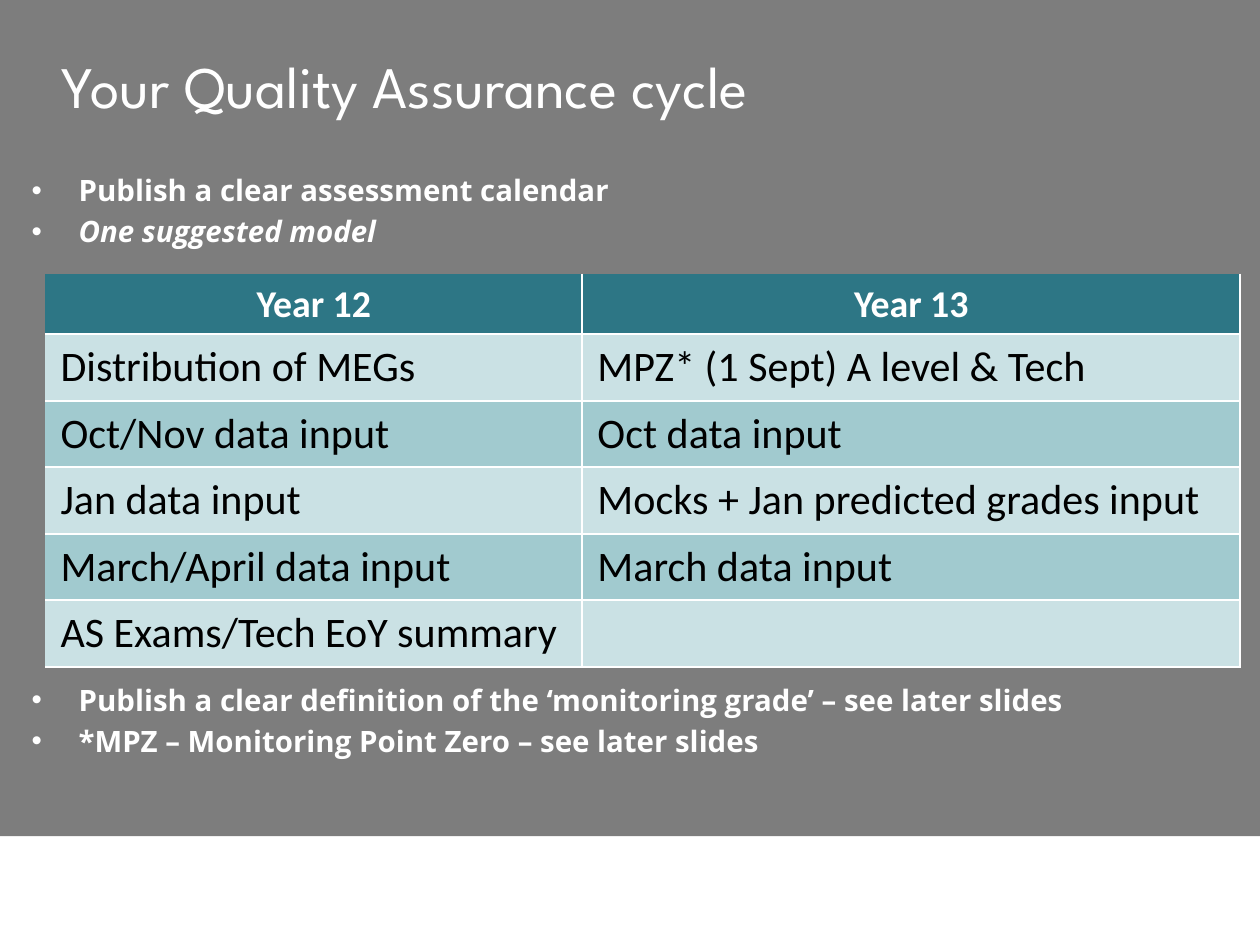
import dataclasses

import lxml.etree
import pptx
import pptx.dml.color
import pptx.enum.shapes
import pptx.enum.text
import pptx.oxml.ns
import pptx.util

Inches = pptx.util.Inches
Pt = pptx.util.Pt
qn = pptx.oxml.ns.qn
ALIGN = pptx.enum.text.PP_ALIGN
ANCHOR = pptx.enum.text.MSO_ANCHOR

HUES = {
    "panel": "7D7D7D",
    "white": "FFFFFF",
    "black": "000000",
    "head": "2D7685",
    "light": "CAE1E4",
    "dark": "A1CACF",
}


@dataclasses.dataclass(frozen=True)
class Style:
    font: str
    size: float
    hue: str
    bold: bool = False


@dataclasses.dataclass(frozen=True)
class Point:
    text: str
    slant: bool = False


@dataclasses.dataclass(frozen=True)
class Group:
    top: float
    points: tuple[Point, ...]


TITLE = Style("League Spartan", 28, "white")
BODY = Style("Open Sans", 14, "white", True)
HEAD = Style("Calibri", 18, "white", True)
CELL = Style("Calibri", 20, "black")

GROUPS = (
    Group(1.14, (
        Point("Publish a clear assessment calendar"),
        Point("One suggested model", True),
    )),
    Group(4.51, (
        Point("Publish a clear definition of the ‘monitoring grade’ – see later slides"),
        Point("*MPZ – Monitoring Point Zero – see later slides"),
    )),
)

YEARS = (
    ("Year 12", "Year 13"),
    ("Distribution of MEGs", "MPZ* (1 Sept) A level & Tech"),
    ("Oct/Nov data input", "Oct data input"),
    ("Jan data input", "Mocks + Jan predicted grades input"),
    ("March/April data input", "March data input"),
    ("AS Exams/Tech EoY summary", ""),
)
WIDTHS = (3.55, 4.35)
HEAD_H, ROW_H = 0.4, 0.44


def shade(name: str) -> pptx.dml.color.RGBColor:
    return pptx.dml.color.RGBColor.from_string(HUES[name])


def add_run(para, text: str, style: Style, slant: bool = False) -> None:
    run = para.add_run()
    run.text = text
    font = run.font
    font.name, font.size = style.font, Pt(style.size)
    font.bold, font.italic = style.bold, slant
    font.color.rgb = shade(style.hue)


def add_box(slide, left: float, top: float, width: float, height: float):
    frame = slide.shapes.add_textbox(
        Inches(left), Inches(top), Inches(width), Inches(height)).text_frame
    frame.word_wrap = True
    return frame


def add_group(slide, group: Group) -> None:
    frame = add_box(slide, 0.21, group.top, 7.9, 0.57)
    frame.margin_left = frame.margin_top = frame.margin_bottom = 0
    for i, point in enumerate(group.points):
        para = frame.add_paragraph() if i else frame.paragraphs[0]
        props = para._p.get_or_add_pPr()
        props.set("marL", str(Inches(0.31)))
        props.set("indent", str(-Inches(0.31)))
        face = lxml.etree.SubElement(props, qn("a:buFont"))
        face.set("typeface", "Arial")
        mark = lxml.etree.SubElement(props, qn("a:buChar"))
        mark.set("char", "•")
        if i:
            para.space_before = Pt(2.7)
        add_run(para, point.text, BODY, point.slant)


def add_edge(cell, side: str, drawn: bool) -> None:
    line = lxml.etree.SubElement(
        cell._tc.get_or_add_tcPr(), qn(f"a:ln{side}"), w=str(Pt(1)))
    if drawn:
        fill = lxml.etree.SubElement(line, qn("a:solidFill"))
        lxml.etree.SubElement(fill, qn("a:srgbClr"), val=HUES["white"])
    else:
        lxml.etree.SubElement(line, qn("a:noFill"))


def add_years(slide) -> None:
    high = HEAD_H + ROW_H * (len(YEARS) - 1)
    table = slide.shapes.add_table(
        len(YEARS), len(WIDTHS), Inches(0.3), Inches(1.81),
        Inches(sum(WIDTHS)), Inches(high)).table
    for col, width in zip(table.columns, WIDTHS):
        col.width = Inches(width)
    for r, texts in enumerate(YEARS):
        table.rows[r].height = Inches(ROW_H if r else HEAD_H)
        hue = ("dark", "light")[r % 2] if r else "head"
        for c, text in enumerate(texts):
            cell = table.cell(r, c)
            # The table's outer left and top edges stay bare
            edges = {"L": c > 0, "R": True, "T": r > 0, "B": True}
            for side, drawn in edges.items():
                add_edge(cell, side, drawn)
            cell.fill.solid()
            cell.fill.fore_color.rgb = shade(hue)
            cell.vertical_anchor = ANCHOR.MIDDLE if r else ANCHOR.TOP
            para = cell.text_frame.paragraphs[0]
            para.alignment = ALIGN.LEFT if r else ALIGN.CENTER
            if text:
                add_run(para, text, CELL if r else HEAD)


def main() -> None:
    deck = pptx.Presentation()
    deck.slide_width, deck.slide_height = Inches(8.33), Inches(6.25)
    slide = deck.slides.add_slide(deck.slide_layouts[6])

    # Grey panel
    panel = slide.shapes.add_shape(
        pptx.enum.shapes.MSO_SHAPE.RECTANGLE, 0, 0, Inches(8.33), Inches(5.53))
    panel.shadow.inherit = False
    panel.fill.solid()
    panel.fill.fore_color.rgb = shade("panel")
    panel.line.fill.background()

    # Title
    title = add_box(slide, 0.31, 0.21, 7.12, 0.71)
    title.vertical_anchor = ANCHOR.MIDDLE
    add_run(title.paragraphs[0], "Your Quality Assurance cycle", TITLE)

    # Points above and below the table
    for group in GROUPS:
        add_group(slide, group)

    # Table of both years
    add_years(slide)

    deck.save("out.pptx")


if __name__ == "__main__":
    main()
